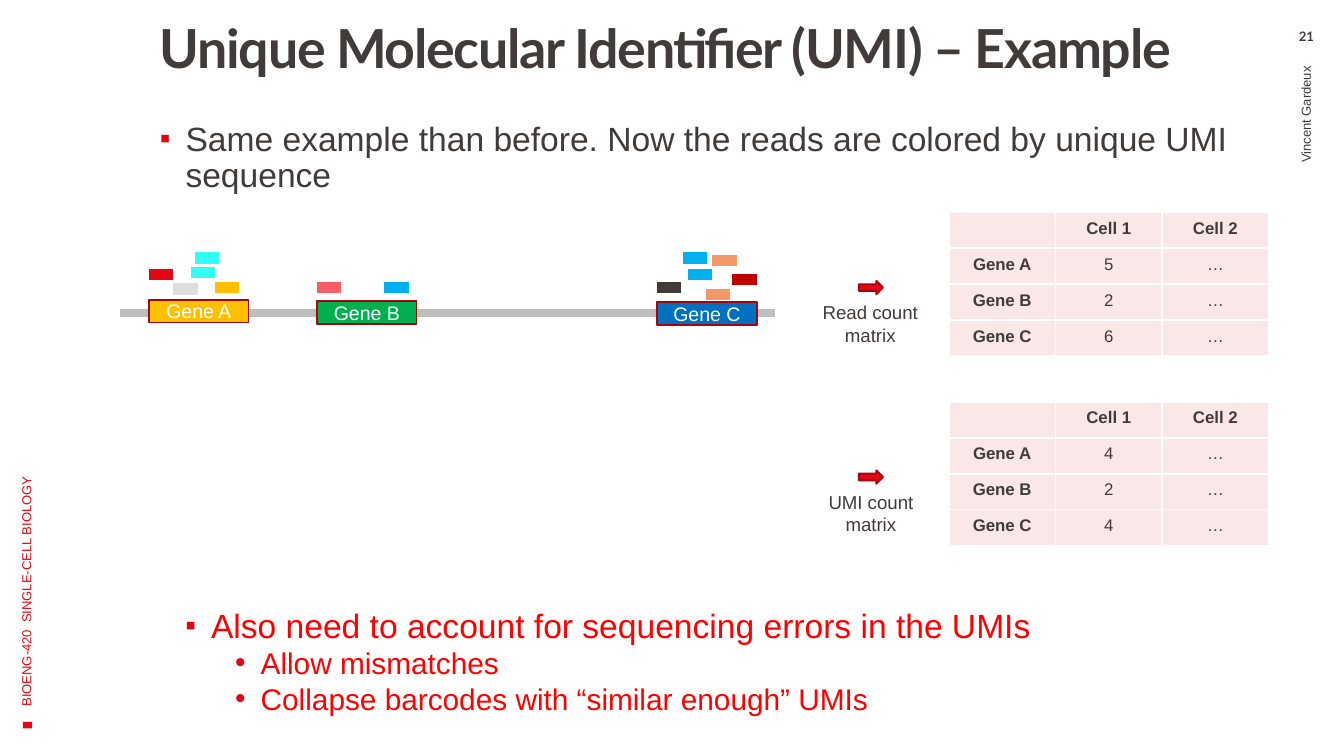
from dataclasses import dataclass

from lxml import etree
from pptx import Presentation
from pptx import util as u
from pptx.dml.color import RGBColor
from pptx.enum import shapes, text
from pptx.oxml import ns

CENTER = text.PP_ALIGN.CENTER
MIDDLE = text.MSO_ANCHOR.MIDDLE
SHAPE = shapes.MSO_SHAPE


@dataclass(frozen=True)
class Theme:
    """Colours, fonts and type sizes of the slide."""
    ink: str = "413C3A"
    accent: str = "E30613"
    outline: str = "A8040E"
    alert: str = "FF0000"
    white: str = "FFFFFF"
    genome: str = "BFBFBF"
    cell: str = "FAE7E7"
    body_font: str = "Arial"
    head_font: str = "Lato"
    title: float = 28.8
    body: float = 18
    detail: float = 16
    gene: float = 10.5
    label: float = 10
    table: float = 9
    margin: float = 7


THEME = Theme()
CYAN, SKY, PEACH = "31FFF5", "00B0F0", "F39869"
GENES = [
    ("Gene A", 1.11, 2.23, "FFC000"),
    ("Gene B", 2.36, 2.24, "00B050"),
    ("Gene C", 4.89, 2.25, "0070C0"),
]
READS = [
    (1.11, 2.04, THEME.accent), (1.29, 2.15, "DFDDDD"), (1.42, 2.03, CYAN),
    (1.6, 2.14, "FFC000"), (1.45, 1.92, CYAN),
    (2.36, 2.14, "FB5D66"), (2.86, 2.14, SKY),
    (4.89, 2.14, THEME.ink), (5.08, 1.92, SKY), (5.12, 2.04, SKY),
    (5.45, 2.08, "C00000"), (5.25, 2.19, PEACH), (5.3, 1.94, PEACH),
]
MATRICES = [
    ("Read count\nmatrix", 6.02, 0.91, 1.58, (5, 2, 6)),
    ("UMI count\nmatrix", 6.06, 0.84, 2.99, (4, 2, 4)),
]


def inches(*lengths):
    """Convert several lengths to Inches."""
    return [u.Inches(length) for length in lengths]


def style_spans(para, size, color=THEME.ink, font=THEME.body_font, bold=False):
    """Format every run of a paragraph."""
    for span in para.runs:
        span.font.size = u.Pt(size)
        span.font.name = font
        span.font.bold = bold
        span.font.color.rgb = RGBColor.from_string(color)


def fill_frame(frame, content, size, align=None, anchor=None, **style):
    """Put styled text into a text frame."""
    frame.text = content
    if anchor is not None:
        frame.vertical_anchor = anchor
    for para in frame.paragraphs:
        para.alignment = align
        style_spans(para, size, **style)


def add_text(page, at, content, size, insets=(0.1, 0.05, 0.1, 0.05),
             rotation=0, wrap=True, **style):
    """Add a text box and return its frame."""
    box = page.shapes.add_textbox(*inches(*at))
    box.rotation = rotation
    frame = box.text_frame
    frame.word_wrap = wrap
    (frame.margin_left, frame.margin_top,
     frame.margin_right, frame.margin_bottom) = inches(*insets)
    fill_frame(frame, content, size, **style)
    return frame


def add_block(page, kind, at, fill, outline=None):
    """Add a filled preset shape."""
    block = page.shapes.add_shape(kind, *inches(*at))
    block.shadow.inherit = False
    block.fill.solid()
    block.fill.fore_color.rgb = RGBColor.from_string(fill)
    if outline:
        block.line.color.rgb = RGBColor.from_string(outline)
        block.line.width = u.Pt(1)
    else:
        block.line.fill.background()
    return block


def add_segment(page, left, right, y, color, width):
    """Add a horizontal line."""
    segment = page.shapes.add_connector(
        shapes.MSO_CONNECTOR.STRAIGHT, *inches(left, y, right, y))
    segment.line.color.rgb = RGBColor.from_string(color)
    segment.line.width = u.Pt(width)
    etree.SubElement(segment._element.spPr, ns.qn("a:effectLst"))


def add_bullet(para, char, margin, percent=100, level=0):
    """Give a paragraph a coloured hanging bullet."""
    para.level = level
    props = para._p.get_or_add_pPr()
    props.set("marL", str(u.Inches(margin)))
    props.set("indent", str(u.Inches(-0.19)))
    color = etree.SubElement(props, ns.qn("a:buClr"))
    etree.SubElement(color, ns.qn("a:srgbClr"), val=THEME.accent)
    etree.SubElement(props, ns.qn("a:buSzPct"), val=str(percent * 1000))
    etree.SubElement(props, ns.qn("a:buFont"), typeface=THEME.body_font)
    etree.SubElement(props, ns.qn("a:buChar"), char=char)


def add_borders(cell):
    """Draw thin white borders around a table cell."""
    props = cell._tc.get_or_add_tcPr()
    for index, side in enumerate(("lnL", "lnR", "lnT", "lnB")):
        border = etree.Element(ns.qn(f"a:{side}"), w=str(u.Pt(1)))
        fill = etree.SubElement(border, ns.qn("a:solidFill"))
        etree.SubElement(fill, ns.qn("a:srgbClr"), val=THEME.white)
        props.insert(index, border)


def add_matrix(page, top, counts):
    """Add a gene by cell count table."""
    rows = [("", "Cell 1", "Cell 2")]
    rows += [(gene[0], str(count), "…") for gene, count in zip(GENES, counts)]
    frame = page.shapes.add_table(
        len(rows), len(rows[0]), *inches(7.06, top, 2.38, 1.07))
    table = frame.table
    table.first_row = table.horz_banding = False
    for r, row in enumerate(rows):
        for c, content in enumerate(row):
            cell = table.cell(r, c)
            cell.fill.solid()
            cell.fill.fore_color.rgb = RGBColor.from_string(THEME.cell)
            add_borders(cell)
            fill_frame(cell.text_frame, content, THEME.table, CENTER,
                       bold=r == 0 or c == 0)
            if not content:
                end = cell.text_frame.paragraphs[0]._p.get_or_add_endParaRPr()
                end.set("sz", str(THEME.table * 100))


def add_margins(page):
    """Add the course name, author and page number."""
    add_block(page, SHAPE.RECTANGLE, (0.18, 5.36, 0.05, 0.07),
              THEME.accent).rotation = 270
    add_text(page, (-1.63, 3.33, 3.65, 0.4), "BIOENG-420  SINGLE-CELL BIOLOGY",
             THEME.margin, rotation=270, anchor=MIDDLE, color=THEME.accent)
    add_text(page, (7.78, 2.05, 3.87, 0.56), "Vincent Gardeux", THEME.margin,
             rotation=270, anchor=MIDDLE, align=text.PP_ALIGN.RIGHT)
    add_text(page, (9.44, 0.21, 0.56, 0.18), "21", THEME.margin,
             insets=(0.1, 0, 0.1, 0), align=CENTER, font=THEME.head_font, bold=True)


def add_statements(page):
    """Add the title and the bulleted text."""
    insets = (0.2, 0.05, 0.1, 0.05)
    title = add_text(page, (0.99, 0.2, 8.38, 0.47),
                     "Unique Molecular Identifier (UMI) – Example", THEME.title,
                     insets=(0.2, 0, 0.08, 0.05), font=THEME.head_font, bold=True)
    title.paragraphs[0].line_spacing = 0.8
    title.paragraphs[0].runs[0].font._element.set("spc", "-70")
    intro = add_text(page, (0.99, 0.86, 8.38, 4.56),
                     "Same example than before. Now the reads are colored by "
                     "unique UMI sequence", THEME.body, insets=insets)
    add_bullet(intro.paragraphs[0], "▪", 0.19, 90)
    intro.paragraphs[0].line_spacing = 0.9
    errors = add_text(page, (1.18, 4.51, 8.38, 0.9),
                      "Also need to account for sequencing errors in the UMIs\n"
                      "Allow mismatches\nCollapse barcodes with “similar enough” UMIs",
                      THEME.body, insets=insets, color=THEME.alert)
    lead, *details = errors.paragraphs
    add_bullet(lead, "▪", 0.19, 90)
    lead.line_spacing = 0.8
    for para in details:
        add_bullet(para, "•", 0.56, level=1)
        para.line_spacing = 0.8
        para.space_before = u.Pt(3.8)
        style_spans(para, THEME.detail, THEME.alert)


def add_genome(page):
    """Add the genome line, its genes and the coloured reads."""
    add_segment(page, 0.89, 5.77, 2.33, THEME.genome, 4.5)
    for name, left, top, color in GENES:
        gene = add_block(page, SHAPE.RECTANGLE, (left, top, 0.74, 0.17),
                         color, THEME.outline)
        fill_frame(gene.text_frame, name, THEME.gene, CENTER, MIDDLE,
                   color=THEME.white)
    for left, y, color in READS:
        add_segment(page, left, left + 0.18, y, color, 6)


def main():
    """Build and save the slide."""
    deck = Presentation()
    deck.slide_width = u.Inches(10)
    deck.slide_height = u.Inches(10 * 9 / 16)
    page = deck.slides.add_slide(deck.slide_layouts[6])
    add_margins(page)
    add_statements(page)
    add_genome(page)
    for label, left, width, top, counts in MATRICES:
        add_block(page, SHAPE.RIGHT_ARROW, (6.39, top + 0.51, 0.18, 0.1),
                  THEME.accent, THEME.outline)
        add_text(page, (left, top + 0.61, width, 0.44), label, THEME.label,
                 wrap=False, align=CENTER)
        add_matrix(page, top, counts)
    deck.save("out.pptx")


if __name__ == "__main__":
    main()
